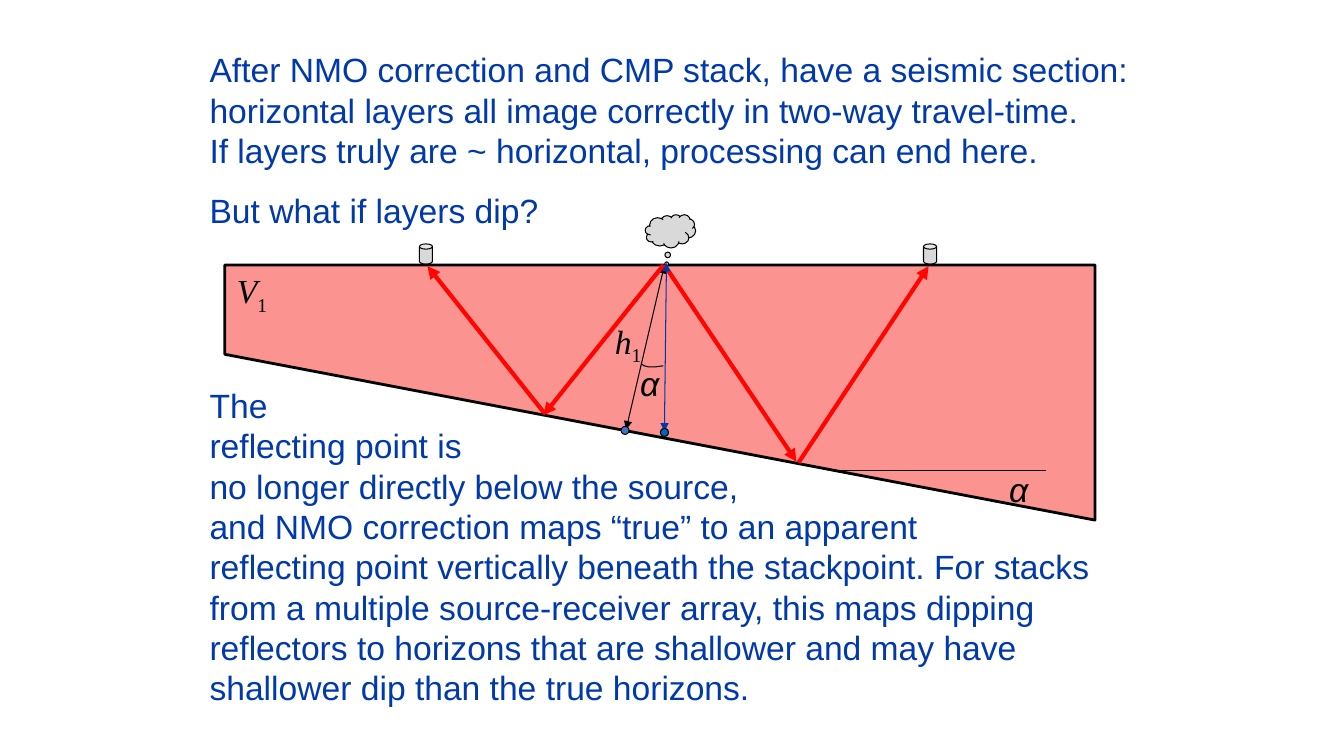
from lxml import etree
from pptx import Presentation
from pptx.dml.color import RGBColor
from pptx.enum.shapes import MSO_CONNECTOR, MSO_SHAPE
from pptx.enum.text import MSO_AUTO_SIZE
from pptx.oxml.ns import qn
from pptx.util import Inches, Pt

LINE = MSO_CONNECTOR.STRAIGHT
CLOUD, CAN, DOT = MSO_SHAPE.CLOUD_CALLOUT, MSO_SHAPE.CAN, MSO_SHAPE.OVAL
GROW = MSO_AUTO_SIZE.SHAPE_TO_FIT_TEXT
BLACK, BLUE, RED, ROCK, GREY = "000000", "0039AC", "FF0501", "FB9491", "D9D9D9"

INTRO = [
    "After NMO correction and CMP stack, have a seismic section:",
    "horizontal layers all image correctly in two-way travel-time.",
    "If layers truly are ~ horizontal, processing can end here.",
    "But what if layers dip?",
]
RESULT = [
    "The",
    "reflecting point is",
    "no longer directly below the source,",
    "and NMO correction maps “true” to an apparent",
    "reflecting point vertically beneath the stackpoint. For stacks",
    "from a multiple source-receiver array, this maps dipping",
    "reflectors to horizons that are shallower and may have",
    "shallower dip than the true horizons.",
]


def paint(fmt, color):
    fmt.solid()
    fmt.fore_color.rgb = RGBColor.from_string(color)


def stroke(line, color, width):
    paint(line.fill, color)
    line.width = Pt(width)


def add_run(para, text, color, **style):
    run = para.add_run()
    run.text = text
    for name, value in {"size": Pt(24), "name": "Arial", **style}.items():
        setattr(run.font, name, value)
    run.font.color.rgb = RGBColor.from_string(color)
    return run


def add_box(slide, box):
    frame = slide.shapes.add_textbox(*map(Inches, box)).text_frame
    frame.word_wrap = False
    frame.auto_size = GROW
    return frame


def add_prose(slide, box, lines, gaps=()):
    """Write one paragraph per line, with extra space before those in gaps."""
    frame = add_box(slide, box)
    for i, text in enumerate(lines):
        para = frame.paragraphs[0] if i == 0 else frame.add_paragraph()
        if i in gaps:
            para.space_before = Pt(14)
        add_run(para, text, BLUE)


def add_label(slide, box, text, sub="", font="Arial"):
    para = add_box(slide, box).paragraphs[0]
    add_run(para, text, BLACK, italic=True, name=font)
    if sub:
        run = add_run(para, sub, BLACK, name=font)
        run.font._element.set("baseline", "-25000")


def add_line(slide, start, end, color, width, tips=()):
    line = slide.shapes.add_connector(LINE, *map(Inches, start + end))
    stroke(line.line, color, width)
    for tip in tips:
        etree.SubElement(line.line._get_or_add_ln(), qn("a:" + tip), type="triangle")
    etree.SubElement(line._element.spPr, qn("a:effectLst"))


def add_mark(slide, kind, box, color, adjust=()):
    mark = slide.shapes.add_shape(kind, *map(Inches, box))
    mark.shadow.inherit = False
    paint(mark.fill, color)
    stroke(mark.line, BLACK, 0.75)
    for i, value in enumerate(adjust):
        mark.adjustments[i] = value


def add_outline(slide, points, width, fill=None):
    """Draw a closed filled shape, or an open line when there is no fill."""
    points = [(Inches(x), Inches(y)) for x, y in points]
    path = slide.shapes.build_freeform(*points[0])
    path.add_line_segments(points[1:], close=bool(fill))
    shape = path.convert_to_shape()
    shape.shadow.inherit = False
    if fill:
        paint(shape.fill, fill)
    else:
        shape.fill.background()
    stroke(shape.line, BLACK, width)


def add_section(slide, left, top, wide, high):
    """Draw the dipping layer, its rays and its labels from the box corner."""
    def at(x, y, *size):
        return (left + x, top + y, *size)

    add_outline(slide, [at(0, 0), at(wide, 0), at(wide, high), at(0, 0.35 * high)],
                2, ROCK)
    add_mark(slide, CLOUD, at(4.17, -0.5, 0.5, 0.33), GREY, (-0.09, 1.19))
    for x in (1.93, 6.93):
        add_mark(slide, CAN, at(x, -0.21, 0.13, 0.2), GREY, (0.4,))

    both = ("headEnd", "tailEnd")
    add_line(slide, at(3.98, 1.63), at(4.36, 0), BLACK, 0.75, both)
    add_outline(slide, [at(4.35, 1), at(4.27, 1.01), at(4.2, 1.01),
                        at(4.16, 1), at(4.13, 0.98)], 0.75)
    rays = [
        ((4.36, 0), (5.67, 1.95)),
        ((5.69, 1.96), (6.98, 0.01)),
        ((4.35, 0), (3.16, 1.49)),
        ((3.17, 1.47), (2.01, 0.01)),
    ]
    for start, end in rays:
        add_line(slide, at(*start), at(*end), RED, 3, ("tailEnd",))
    add_line(slide, at(6.1, 2.04), at(8.14, 2.04), BLACK, 0.75)
    add_line(slide, at(4.36, 1.65), at(4.38, -0.02), BLUE, 0.75, both)
    for x, y, color in ((3.93, 1.6, "4472C4"), (4.32, 1.62, "0563C1")):
        add_mark(slide, DOT, at(x, y, 0.08, 0.08), color)

    serif = "Times New Roman"
    add_label(slide, at(3.77, 0.5, 0.48, 0.5), "h", "1", serif)
    add_label(slide, at(0.02, 0, 0.52, 0.5), "V", "1", serif)
    for x, y in ((4.02, 0.92), (7.68, 1.97)):
        add_label(slide, at(x, y, 0.41, 0.5), "α")


def main():
    deck = Presentation()
    deck.slide_width, deck.slide_height = Inches(13.33), Inches(7.5)
    slide = deck.slides.add_slide(deck.slide_layouts[6])
    add_prose(slide, (1.98, 0.44, 9.38, 1.92), INTRO, gaps=(3,))
    add_section(slide, 2.23, 2.63, 8.63, 2.53)
    add_prose(slide, (1.98, 3.77, 9.02, 3.33), RESULT)
    deck.save("out.pptx")


if __name__ == "__main__":
    main()
